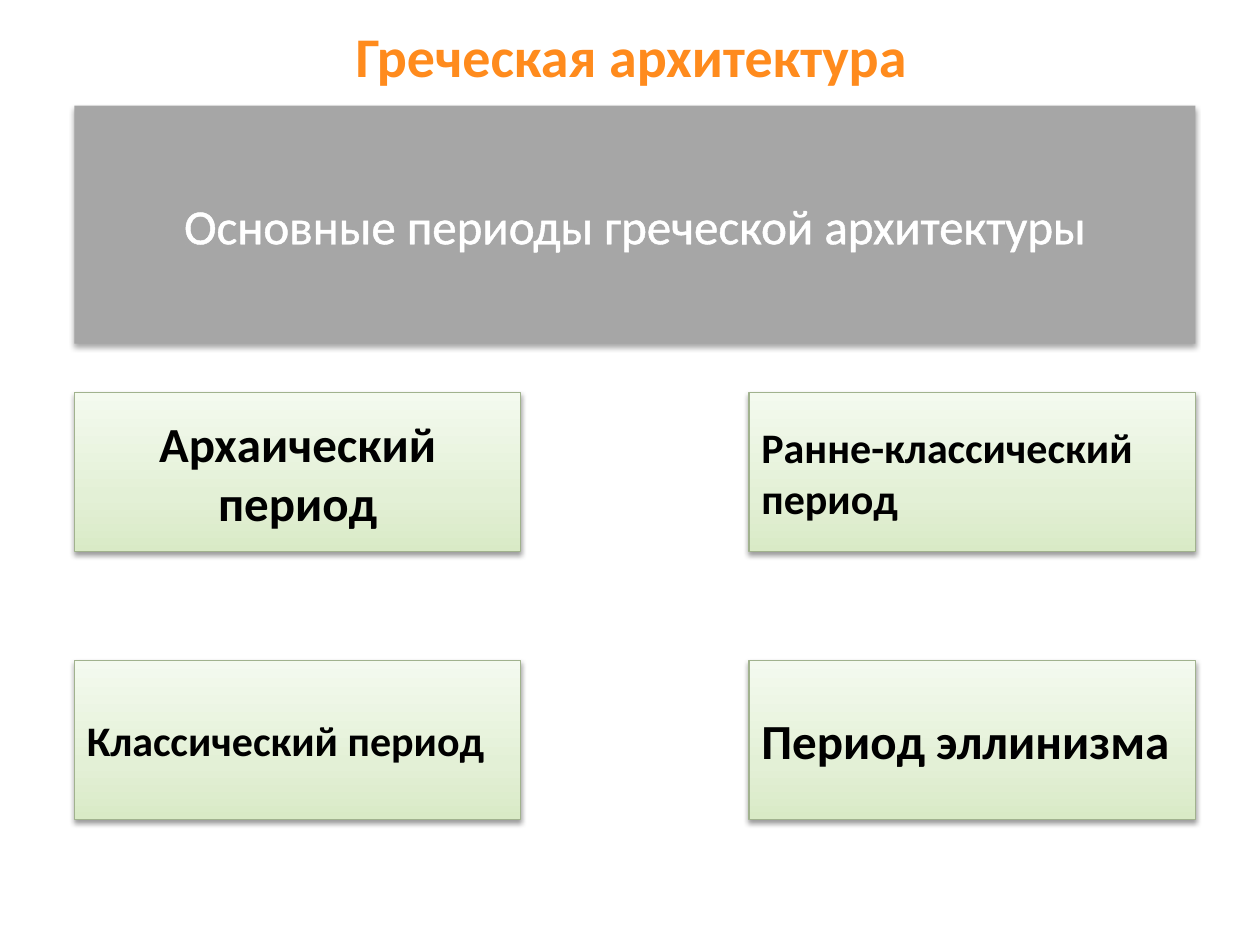
from lxml import etree
from pptx import Presentation
from pptx.dml.color import RGBColor
from pptx.enum.shapes import MSO_SHAPE as SHAPE
from pptx.enum.text import MSO_ANCHOR as ANCHOR, PP_ALIGN as ALIGN
from pptx.oxml import parse_xml
from pptx.oxml.ns import nsdecls, qn
from pptx.util import Cm, Pt

TITLE_GRAD = [(0, "FFC497"), (75, "FF8B1D"), (100, "E87E00")]
CARD_GRAD = [(0, "D9EAC6"), (35, "E3F0D6"), (100, "F4FAEF")]
CARDS = [
    ("Архаический период", 28, ALIGN.CENTER),
    ("Ранне-классический период", 24, ALIGN.LEFT),
    ("Классический период", 24, ALIGN.LEFT),
    ("Период эллинизма", 28, ALIGN.LEFT),
]


def rgb(code):
    return RGBColor.from_string(code)


def gradient(stops, angle):
    gs = "".join(
        f'<a:gs pos="{pos * 1000}"><a:srgbClr val="{code}"/></a:gs>' for pos, code in stops
    )
    return parse_xml(
        f'<a:gradFill {nsdecls("a")} rotWithShape="1"><a:gsLst>{gs}</a:gsLst>'
        f'<a:lin ang="{angle * 60000}" scaled="0"/></a:gradFill>'
    )


def add_shadow(sp, distance, alpha):
    sp.shadow.inherit = False
    effects = sp._element.spPr.find(qn("a:effectLst"))
    shadow = etree.SubElement(
        effects, qn("a:outerShdw"), blurRad=str(Pt(3.1)), dist=str(Pt(distance)),
        dir="5400000", rotWithShape="0",
    )
    color = etree.SubElement(shadow, qn("a:srgbClr"), val="000000")
    etree.SubElement(color, qn("a:alpha"), val=str(alpha * 1000))


def write(sp, text, size, color, bold=False, align=ALIGN.CENTER):
    tf = sp.text_frame
    tf.word_wrap = True
    tf.vertical_anchor = ANCHOR.MIDDLE
    p = tf.paragraphs[0]
    p.alignment = align
    r = p.add_run()
    r.text = text
    for name, value in {"name": "Calibri", "size": Pt(size), "bold": bold}.items():
        setattr(r.font, name, value)
    r.font.color.rgb = rgb(color)
    return r


def add_title(slide, x, y, w, h):
    sp = slide.shapes.add_textbox(Cm(x), Cm(y), Cm(w), Cm(h))
    r = write(sp, "Греческая архитектура", 32, "FF8B1D", True)
    solid = r.font._element.find(qn("a:solidFill"))
    solid.getparent().replace(solid, gradient(TITLE_GRAD, 90))


def add_header(slide, x, y, w, h):
    sp = slide.shapes.add_shape(SHAPE.RECTANGLE, Cm(x), Cm(y), Cm(w), Cm(h))
    sp.fill.solid()
    sp.fill.fore_color.rgb = rgb("A6A6A6")
    sp.line.fill.background()
    add_shadow(sp, 1.8, 35)
    r = write(sp, "Основные периоды греческой архитектуры", 28, "FFFFFF")
    r.font._element.insert(0, parse_xml(
        f'<a:ln {nsdecls("a")} w="{Pt(1.45)}"><a:solidFill>'
        '<a:srgbClr val="FFFFFF"/></a:solidFill></a:ln>'
    ))


def add_card(slide, x, y, w, h, text, size, align):
    sp = slide.shapes.add_shape(SHAPE.RECTANGLE, Cm(x), Cm(y), Cm(w), Cm(h))
    sp._element.spPr.find(qn("a:prstGeom")).addnext(gradient(CARD_GRAD, 270))
    sp.line.color.rgb = rgb("A1B28E")
    sp.line.width = Pt(0.75)
    add_shadow(sp, 1.6, 38)
    write(sp, text, size, "000000", True, align)


def add_periods(slide, x, y, w, h):
    card_w, card_h = 9, 3.2
    for i, card in enumerate(CARDS):
        row, col = divmod(i, 2)
        add_card(slide, x + col * (w - card_w), y + row * (h - card_h), card_w, card_h, *card)


def main():
    prs = Presentation()
    prs.slide_width, prs.slide_height = Cm(25.4), Cm(19.05)
    slide = prs.slides.add_slide(prs.slide_layouts[6])
    add_title(slide, 1.3, -0.48, 22.86, 3.18)
    add_header(slide, 1.5, 2.13, 22.6, 4.8)
    add_periods(slide, 1.5, 7.92, 22.6, 8.6)
    prs.save("out.pptx")


if __name__ == "__main__":
    main()
